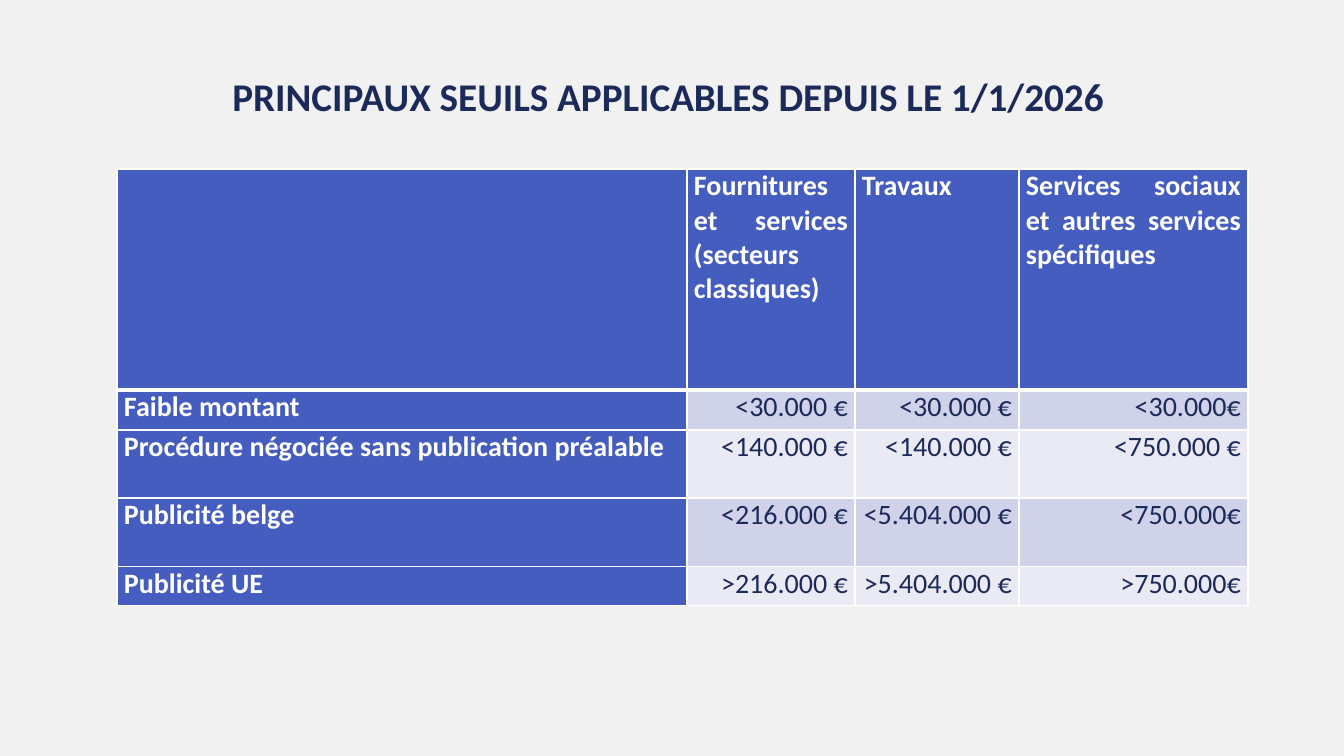
from lxml.etree import SubElement
from pptx import Presentation
from pptx.dml.color import RGBColor
from pptx.enum.text import MSO_ANCHOR as ANCHOR, MSO_AUTO_SIZE as AUTO, PP_ALIGN as ALIGN
from pptx.oxml.ns import qn
from pptx.util import Emu, Pt

SCALE = 914400 / 100.8
FONT = "Calibri"
BLUE, WHITE, BANDS = "455DBE", "FFFFFF", ("CFD2E8", "E9EAF4")
COLS = (570, 168, 164, 229)
ROWS = (221, 40, 68, 69, 39)
THRESHOLDS = (
    ("", "Fournitures et services (secteurs classiques)", "Travaux ",
     "Services sociaux et autres services spécifiques"),
    ("Faible montant", "<30.000 €", "<30.000 €", "<30.000€"),
    ("Procédure négociée sans publication préalable",
     "<140.000 €", "<140.000 €", "<750.000 €"),
    ("Publicité belge", " <216.000 €", "<5.404.000 €", "<750.000€"),
    ("Publicité UE", ">216.000 €", ">5.404.000 €", ">750.000€"),
)


def px(n):
    """Turn pixels into EMU."""
    return Emu(round(n * SCALE))


def rgb(value):
    """Turn a hex string into a colour."""
    return RGBColor.from_string(value)


def style(p, size, color, bold, align):
    """Format a paragraph and its runs."""
    p.alignment = align
    for r in p.runs:
        r.font.name, r.font.size, r.font.bold = FONT, Pt(size), bold
        r.font.color.rgb = rgb(color)


def add_borders(cell, bottom):
    """Draw white borders round a cell, with the given bottom width."""
    tcPr = cell._tc.get_or_add_tcPr()
    for side, width in (("L", 1), ("R", 1), ("T", 1), ("B", bottom)):
        ln = SubElement(tcPr, qn(f"a:ln{side}"), w=str(Pt(width)))
        fill = SubElement(ln, qn("a:solidFill"))
        SubElement(fill, qn("a:srgbClr"), val=WHITE)


def add_title(s, x, y, w, h):
    """Place the title in its box."""
    sp = s.shapes.title
    sp.left, sp.top, sp.width, sp.height = map(px, (x, y, w, h))
    tf = sp.text_frame
    tf.text = "PRINCIPAUX SEUILS APPLICABLES DEPUIS LE 1/1/2026 "
    tf.word_wrap, tf.auto_size = True, AUTO.NONE
    tf.vertical_anchor = ANCHOR.BOTTOM
    tf.margin_left, tf.margin_right = 0, px(10)
    tf.margin_top = tf.margin_bottom = px(5)
    p = tf.paragraphs[0]
    p.line_spacing = 0.9
    style(p, 28, "1C2A5A", True, ALIGN.CENTER)


def fill_cell(cell, text, row, col):
    """Write and format one cell according to its row and column."""
    header = row == 0 or col == 0
    cell.text = text
    cell.margin_left = cell.margin_right = px(7)
    cell.margin_top = cell.margin_bottom = 0
    add_borders(cell, 1 if row else 3)
    cell.fill.solid()
    cell.fill.fore_color.rgb = rgb(BLUE if header else BANDS[(row - 1) % 2])
    style(cell.text_frame.paragraphs[0], 20, WHITE if header else "1C2A59",
          header, ALIGN.JUSTIFY if header else ALIGN.RIGHT)


def add_thresholds(s, x, y):
    """Place the table of thresholds from its top left corner."""
    table = s.shapes.add_table(len(ROWS), len(COLS), px(x), px(y),
                               px(sum(COLS)), px(sum(ROWS))).table
    for column, width in zip(table.columns, COLS):
        column.width = px(width)
    for i, (height, texts) in enumerate(zip(ROWS, THRESHOLDS)):
        table.rows[i].height = px(height)
        for j, text in enumerate(texts):
            fill_cell(table.cell(i, j), text, i, j)


def main():
    """Build and save the slide."""
    prs = Presentation()
    prs.slide_width, prs.slide_height = px(1344), px(756)
    s = prs.slides.add_slide(prs.slide_layouts[5])
    s.background.fill.solid()
    s.background.fill.fore_color.rgb = rgb("F1F1F1")
    add_title(s, 98, 24, 1159, 101)
    add_thresholds(s, 117, 169)
    prs.save("out.pptx")


if __name__ == "__main__":
    main()
